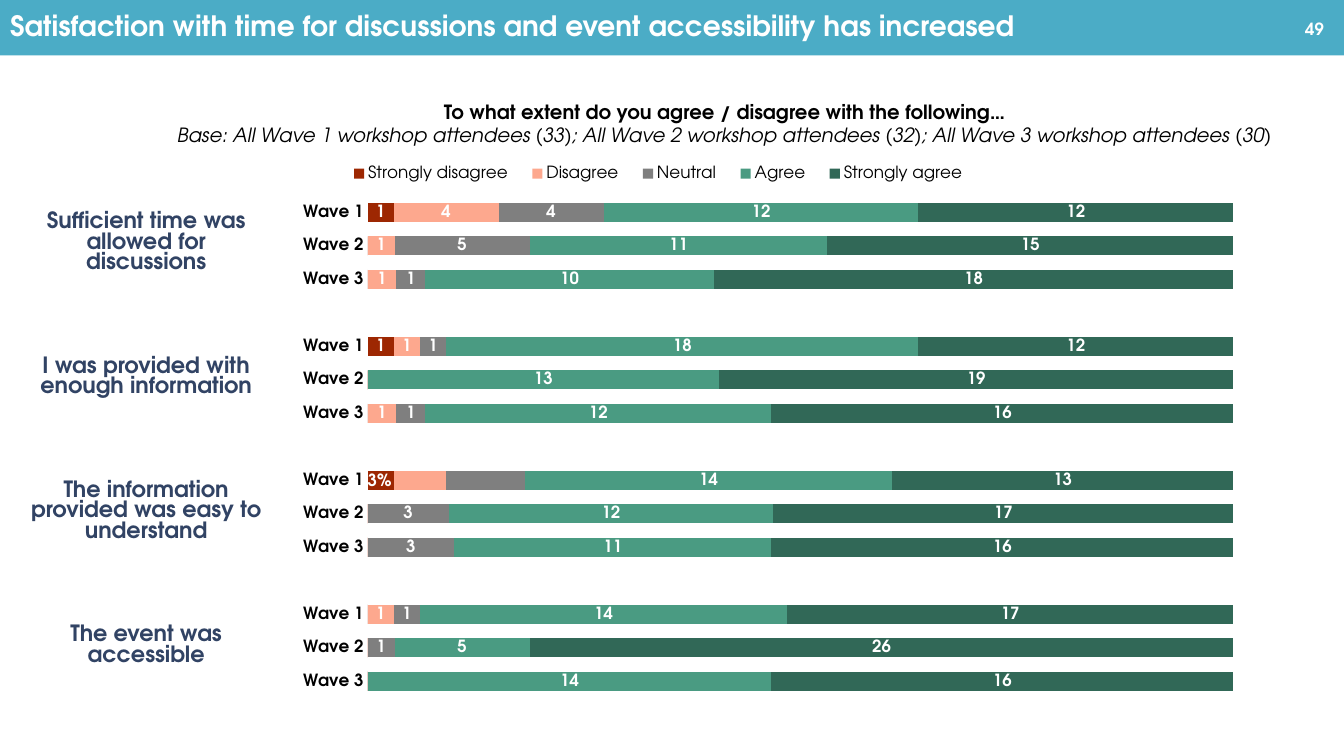
from pptx import Presentation
from pptx.chart.data import CategoryChartData
from pptx.dml.color import RGBColor
from pptx.enum.chart import XL_CHART_TYPE as ChartType, XL_LABEL_POSITION as LabelPos
from pptx.enum.chart import XL_LEGEND_POSITION as LegendPos, XL_TICK_MARK as Tick
from pptx.enum.text import MSO_ANCHOR as Anchor, MSO_AUTO_SIZE as AutoSize, PP_ALIGN as Align
from pptx.oxml import parse_xml
from pptx.oxml.ns import nsdecls
from pptx.util import Inches, Pt


def color(hex_code):
    return RGBColor.from_string(hex_code)


def set_font(font, hex_code, **formats):
    font.color.rgb = color(hex_code)
    for attribute, value in {"name": "TeX Gyre Adventor", "bold": True, "italic": False, **formats}.items():
        setattr(font, attribute, value)


ratings = {
    "Strongly disagree": "9D2702",
    "Disagree": "FDA88E",
    "Neutral": "7F7F7F",
    "Agree": "4A9B82",
    "Strongly agree": "316857",
}
statements = {
    "Sufficient time was allowed for discussions":
        [(1, 4, 4, 12, 12), (0, 1, 5, 11, 15), (0, 1, 1, 10, 18)],
    "I was provided with enough information":
        [(1, 1, 1, 18, 12), (0, 0, 0, 13, 19), (0, 1, 1, 12, 16)],
    "The information provided was easy to understand":
        [(1, 2, 3, 14, 13), (0, 0, 3, 12, 17), (0, 0, 3, 11, 16)],
    "The event was accessible":
        [(0, 1, 1, 14, 17), (0, 0, 1, 5, 26), (0, 0, 0, 14, 16)],
}

deck = Presentation()
deck.slide_width, deck.slide_height = Inches(13.33), Inches(7.5)
slide = deck.slides.add_slide(deck.slide_layouts[5])

headline = slide.shapes.title
for side, length in {"left": 0, "top": 0, "width": 13.33, "height": 0.55}.items():
    setattr(headline, side, Inches(length))
headline.fill.solid()
headline.fill.fore_color.rgb = color("4BACC6")
headline.text_frame.text = "Satisfaction with time for discussions and event accessibility has increased"
headline.text_frame.auto_size = AutoSize.NONE
headline.text_frame.vertical_anchor = Anchor.MIDDLE
headline_line = headline.text_frame.paragraphs[0]
headline_line.alignment = Align.LEFT
headline_line.line_spacing = 0.9
set_font(headline_line.font, "FFFFFF", size=Pt(20))

bars = []
for waves in reversed(statements.values()):
    if bars:
        bars.append(("", (None,) * len(ratings)))
    bars += [(f"Wave {number}", waves[number - 1]) for number in (3, 2, 1)]

responses = CategoryChartData()
responses.categories = [wave for wave, counts in bars]
for position, rating in enumerate(ratings):
    responses.add_series(rating, [counts[position] for wave, counts in bars])
chart = slide.shapes.add_chart(
    ChartType.BAR_STACKED_100, Inches(1.83), Inches(1.32), Inches(10.68), Inches(5.75), responses).chart
set_font(chart.font, "000000", size=Pt(12))
chart.has_title = False
chart.has_legend = True
chart.legend.position = LegendPos.TOP
chart.legend.include_in_layout = False
set_font(chart.legend.font, "000000", size=Pt(12), bold=False)

wave_axis = chart.category_axis
wave_axis.major_tick_mark = wave_axis.minor_tick_mark = Tick.NONE
wave_axis.format.line.fill.background()
set_font(wave_axis.tick_labels.font, "000000", size=Pt(12))
chart.value_axis.visible = False
chart.value_axis.has_major_gridlines = False

plot = chart.plots[0]
plot.gap_width, plot.overlap = 75, 100
plot.vary_by_categories = False
unlabelled_bar = bars.index(("Wave 1", statements["The information provided was easy to understand"][0]))
for series in plot.series:
    series.format.fill.solid()
    series.format.fill.fore_color.rgb = color(ratings[series.name])
    labels = series.data_labels
    labels.show_value = True
    labels.position = LabelPos.CENTER
    labels.number_format = "0;;;"
    labels.number_format_is_linked = False
    set_font(labels.font, "FFFFFF", size=Pt(12))
    if series.name in ("Strongly disagree", "Disagree", "Neutral"):
        labels._element.insert(0, parse_xml(
            f'<c:dLbl {nsdecls("c")}><c:idx val="{unlabelled_bar}"/><c:delete val="1"/></c:dLbl>'))

chart_root = chart._chartSpace.chart
for part, target, frame in [
    (chart_root.plotArea, '<c:layoutTarget val="inner"/>', {"x": 0.17, "y": 0.108, "w": 0.804, "h": 0.867}),
    (chart.legend._element, "", {"x": 0.14, "y": 0.04, "w": 0.6, "h": 0.06}),
]:
    for previous in part.findall("{*}layout"):
        part.remove(previous)
    modes = "".join(f'<c:{key}Mode val="edge"/>' for key in "xy")
    sizes = "".join(f'<c:{key} val="{value}"/>' for key, value in frame.items())
    layout = parse_xml(
        f'<c:layout {nsdecls("c")}><c:manualLayout>{target}{modes}{sizes}</c:manualLayout></c:layout>')
    part.insert(0 if target else 1, layout)

bold, italic = {"bold": True}, {"bold": False, "italic": True}
captions = [
    ((1.56, 0.94, 11.26, 0.57), Anchor.TOP, Align.CENTER, 14, "000000", [
        ("To what extent do you agree / disagree with the following…", bold),
        ("Base: All Wave 1 workshop attendees (33); All Wave 2 workshop attendees (32); "
         "All Wave 3 workshop attendees (30)", italic)]),
    ((12.58, 0.06, 0.65, 0.45), Anchor.MIDDLE, Align.RIGHT, 12, "FFFFFF", [("49", bold)]),
    ((3.46, 4.61, 0.61, 0.3), Anchor.TOP, Align.CENTER, 12, "FFFFFF", [("3%", bold)]),
]
for place, anchor, alignment, size, hex_code, lines in captions:
    caption = slide.shapes.add_textbox(*map(Inches, place)).text_frame
    caption.word_wrap = True
    caption.vertical_anchor = anchor
    caption.text = "\n".join(text for text, formats in lines)
    for paragraph, (text, formats) in zip(caption.paragraphs, lines):
        paragraph.alignment = alignment
        set_font(paragraph.font, hex_code, size=Pt(size), **formats)

statement_table = slide.shapes.add_table(
    len(statements), 1, Inches(0.23), Inches(1.74), Inches(2.44), Inches(5.33)).table
statement_table.first_row = statement_table.horz_banding = False
for cell, statement in zip(statement_table.iter_cells(), statements):
    cell.fill.background()
    cell.text = statement
    cell.vertical_anchor = Anchor.MIDDLE
    cell.margin_left = cell.margin_right = cell.margin_top = Inches(0.01)
    cell.margin_bottom = 0
    paragraph = cell.text_frame.paragraphs[0]
    paragraph.alignment = Align.CENTER
    set_font(paragraph.font, "314364", size=Pt(16))

deck.save("out.pptx")
